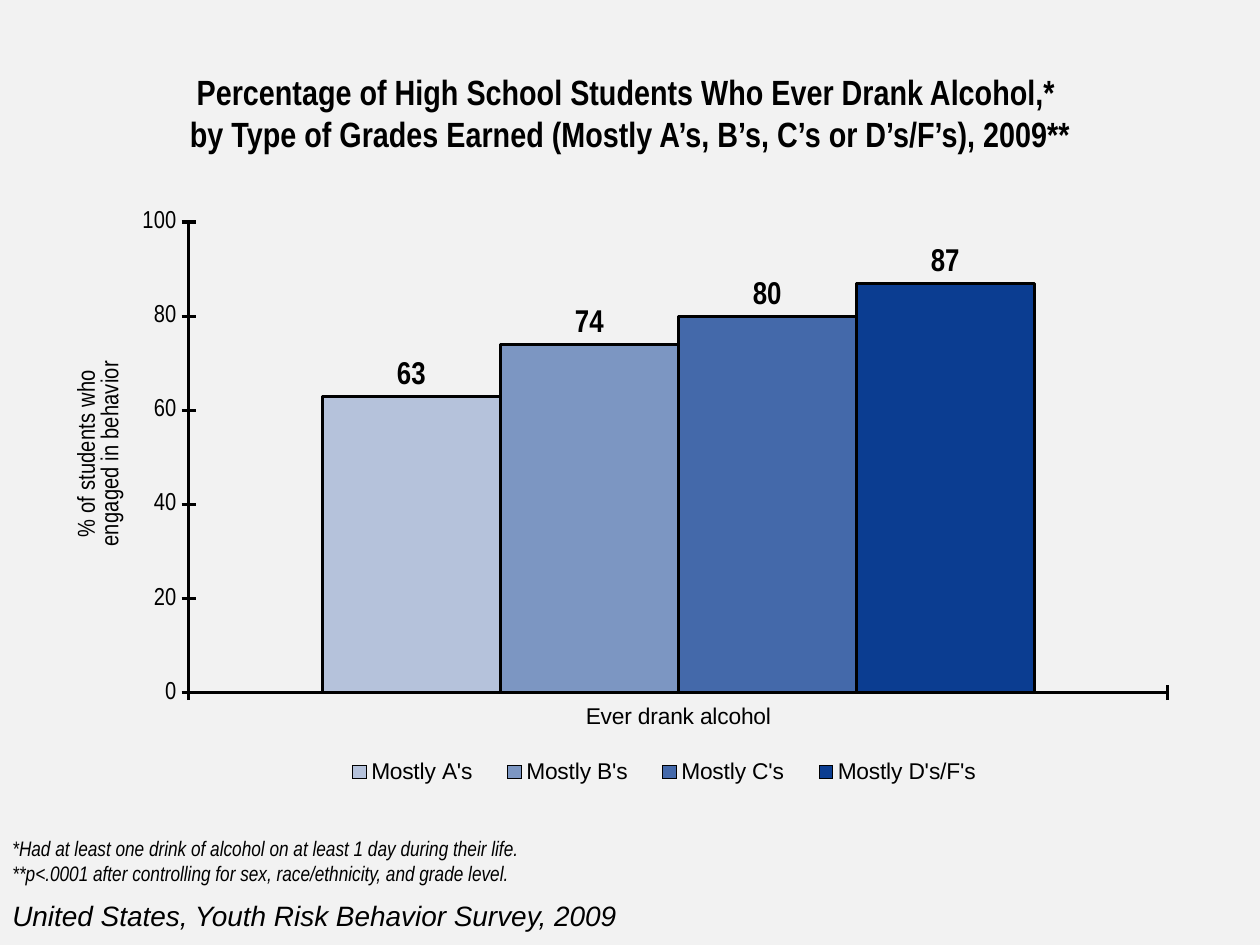
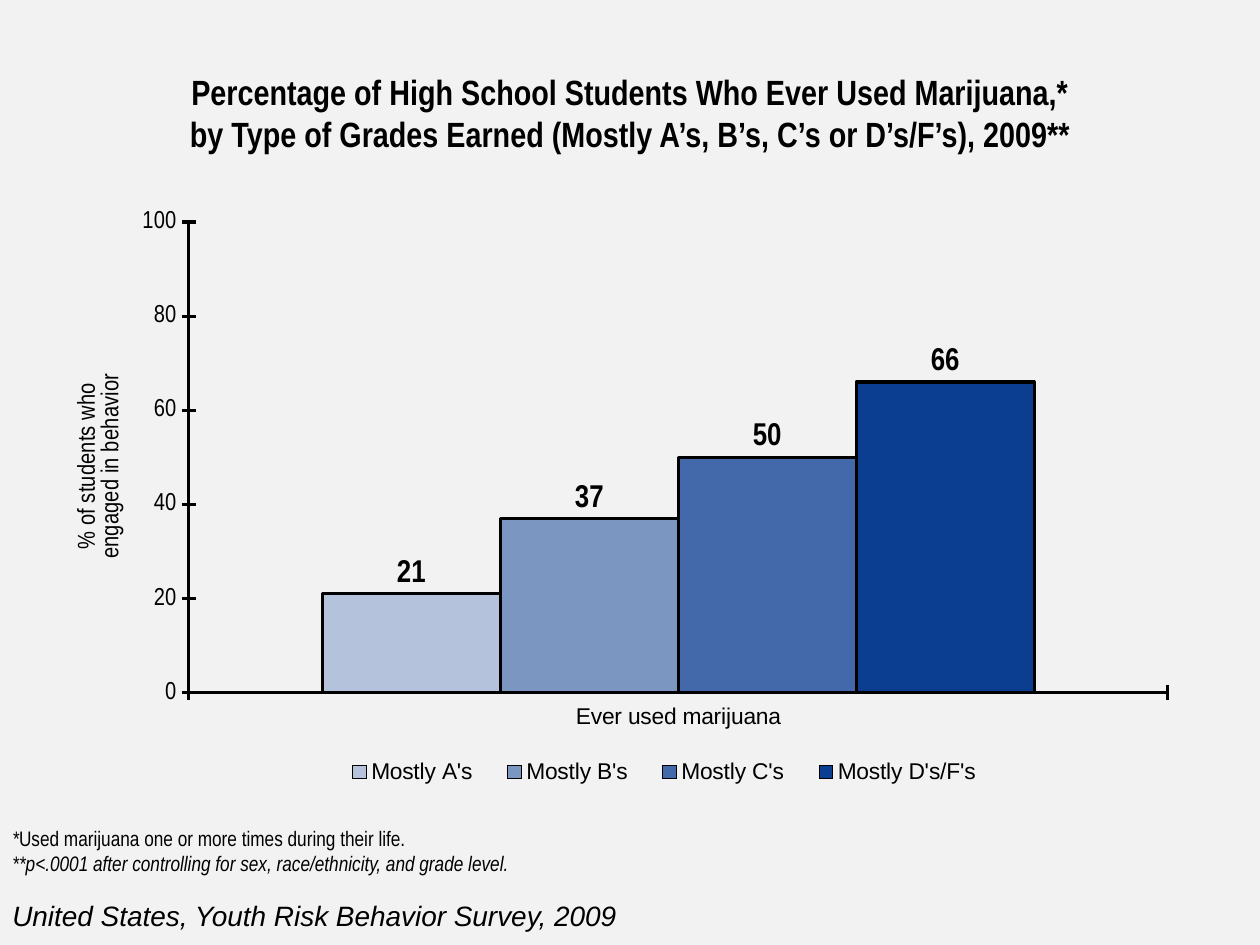
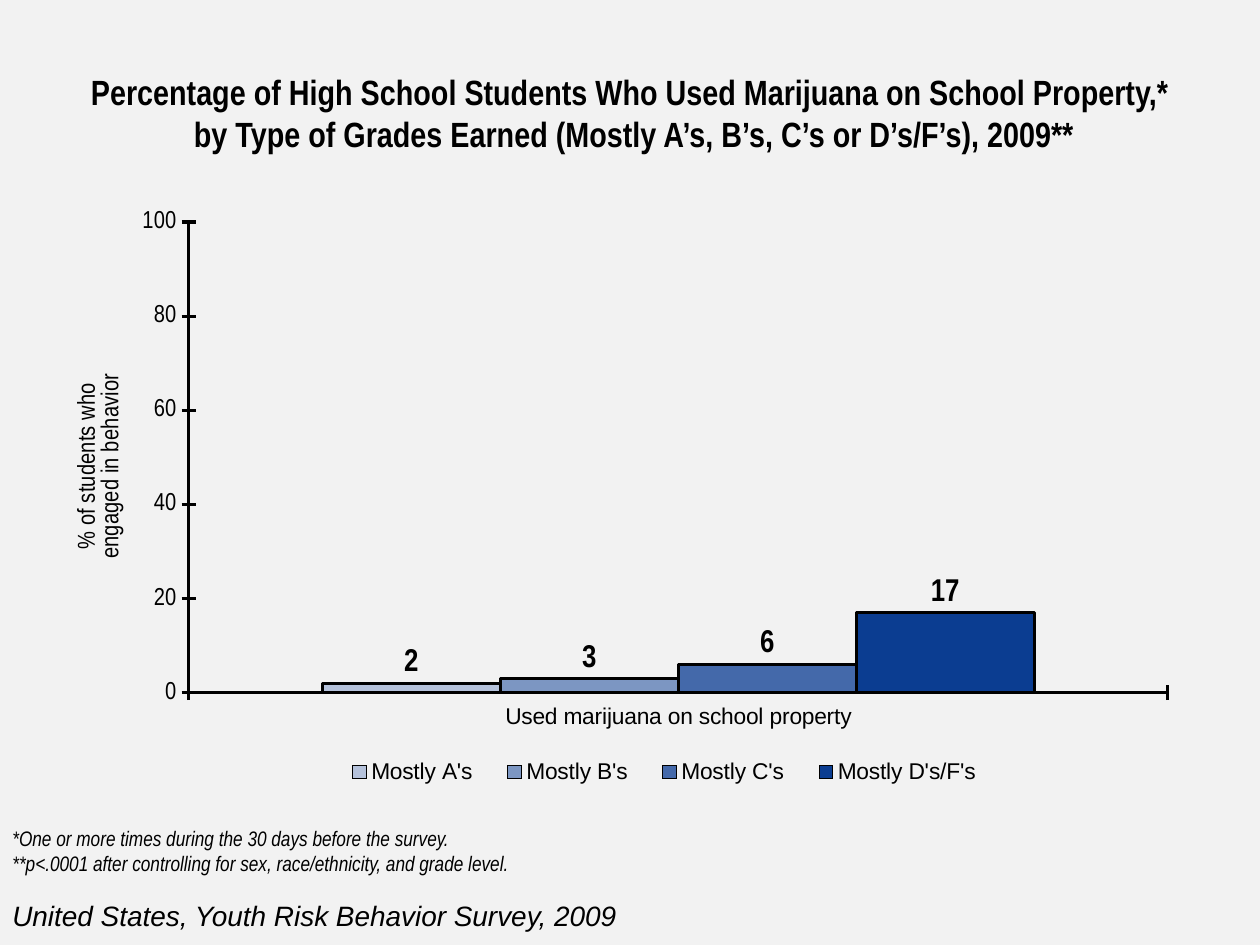
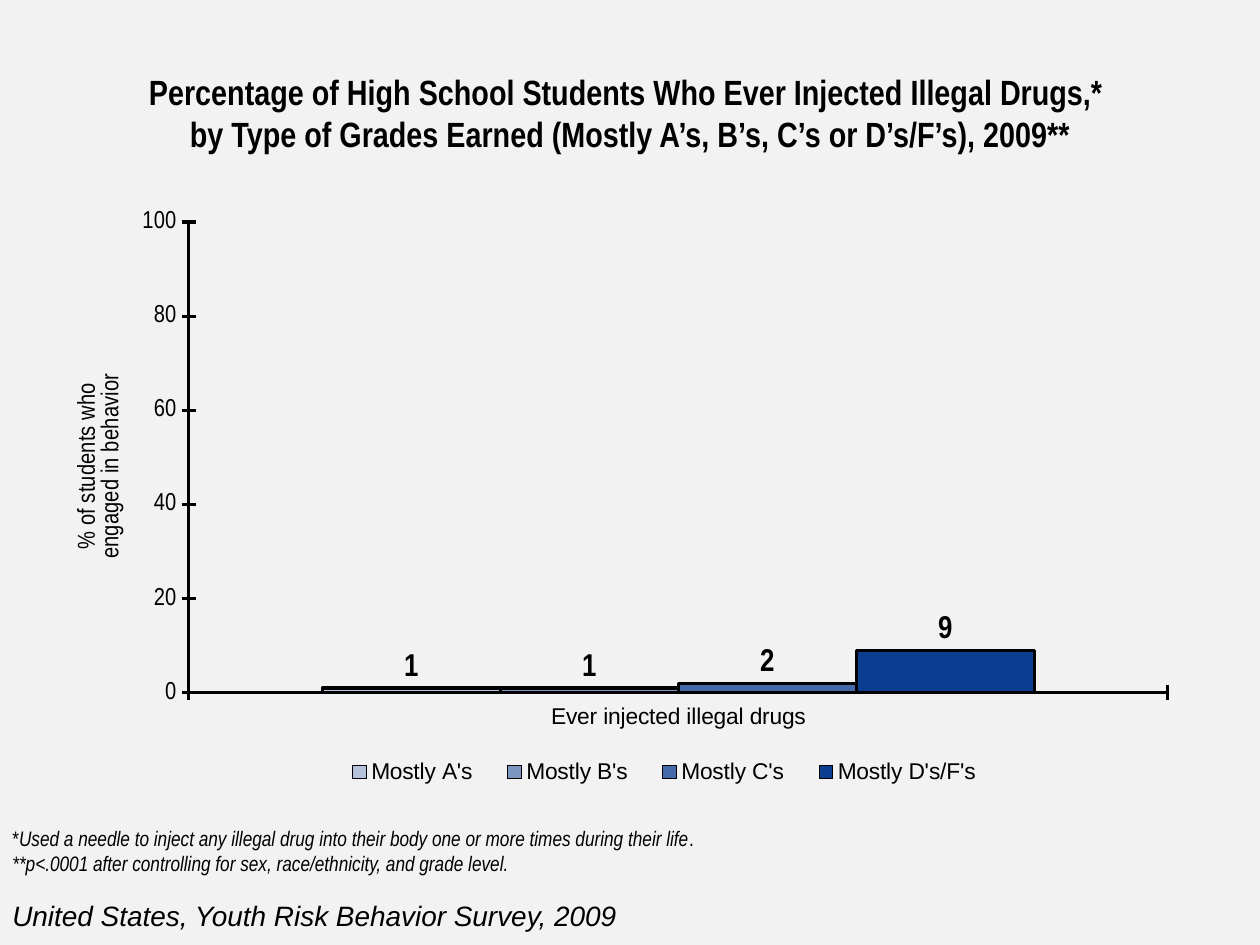
from lxml.etree import SubElement
from pptx import Presentation
from pptx.chart.data import CategoryChartData
from pptx.dml.color import RGBColor
from pptx.enum.chart import XL_CHART_TYPE as ChartType
from pptx.enum.chart import XL_LABEL_POSITION as LabelPosition
from pptx.enum.chart import XL_LEGEND_POSITION as LegendPosition
from pptx.enum.chart import XL_TICK_MARK as TickMark
from pptx.enum.text import MSO_ANCHOR as Anchor
from pptx.enum.text import MSO_AUTO_SIZE as AutoSize
from pptx.enum.text import PP_ALIGN as Align
from pptx.oxml.ns import qn
from pptx.util import Cm, Pt

INK = RGBColor(0x00, 0x00, 0x00)
PAPER = RGBColor(0xF2, 0xF2, 0xF2)
GRADES = [
    ("Mostly A's", RGBColor(0xB5, 0xC2, 0xDB)),
    ("Mostly B's", RGBColor(0x7C, 0x96, 0xC2)),
    ("Mostly C's", RGBColor(0x44, 0x69, 0xAA)),
    ("Mostly D's/F's", RGBColor(0x0B, 0x3D, 0x91)),
]

SUBTITLE = "by Type of Grades Earned (Mostly A’s, B’s, C’s or D’s/F’s), 2009**"
AXIS_TITLE = "% of students who\nengaged in behavior"
CONTROLS = "**p<.0001 after controlling for sex, race/ethnicity, and grade level."
SURVEY = "United States, Youth Risk Behavior Survey, 2009"

SLIDES = [
    {
        "title": "Percentage of High School Students Who Ever Drank Alcohol,* \v" + SUBTITLE,
        "behavior": "Ever drank alcohol",
        "values": [63, 74, 80, 87],
        "note": [("*Had at least one drink of alcohol on at least 1 day during their life.", True)],
        "note_box": (16.71, 16.71),
        "axis_title_top": 0.27,
    },
    {
        "title": "Percentage of High School Students Who Ever Used Marijuana,*\v" + SUBTITLE,
        "behavior": "Ever used marijuana",
        "values": [21, 37, 50, 66],
        "note": [("*", True), ("Used marijuana one or more times during their life.", False)],
        "note_box": (16.51, 11.43),
        "axis_title_top": 0.29,
    },
    {
        "title": "Percentage of High School Students Who Used Marijuana on School Property,*\v "
        + SUBTITLE,
        "behavior": "Used marijuana on school property",
        "values": [2, 3, 6, 17],
        "note": [("*One or more times during the 30 days before the survey.", True)],
        "note_box": (16.51, 14.96),
        "axis_title_top": 0.29,
    },
    {
        "title": "Percentage of High School Students Who Ever Injected Illegal Drugs,* \v" + SUBTITLE,
        "behavior": "Ever injected illegal drugs",
        "values": [1, 1, 2, 9],
        "note": [
            ("*", False),
            ("Used a needle to inject any illegal drug into their body "
             "one or more times during their life", True),
            (".", False),
        ],
        "note_box": (16.51, 15.04),
        "axis_title_top": 0.29,
    },
]

TITLE_FONT = {"name": "Arial Narrow", "size": Pt(20), "bold": True}
NOTE_FONT = {"name": "Arial Narrow", "size": Pt(12)}
SURVEY_FONT = {"name": "Arial", "size": Pt(16)}
CHART_FONT = {"name": "Arial", "size": Pt(18), "bold": False}
CATEGORY_FONT = {"name": "Arial", "size": Pt(13), "bold": False}
VALUE_FONT = {"name": "Arial Narrow", "size": Pt(14), "bold": False}
LABEL_FONT = {"name": "Arial Narrow", "size": Pt(18), "bold": True}


def assign(target, values):
    for name, value in values.items():
        setattr(target, name, value)


def style_font(font, values):
    assign(font, values)
    font.color.rgb = INK


def style_line(line):
    line.color.rgb = INK
    line.width = Pt(1.75)


def set_layout(parent, index, edges, inner=False):
    for old in parent.findall(qn("c:layout")):
        parent.remove(old)
    layout = SubElement(parent, qn("c:layout"))
    parent.insert(index, layout)
    manual = SubElement(layout, qn("c:manualLayout"))
    settings = [("layoutTarget", "inner")] if inner else []
    settings += [("xMode", "edge"), ("yMode", "edge")]
    settings += zip("xywh", edges)
    for name, value in settings:
        SubElement(manual, qn("c:" + name)).set("val", str(value))


def add_title(page, text):
    title = page.shapes.title
    assign(title, {"left": 0, "top": Cm(0.84), "width": Cm(25.4), "height": Cm(2.84)})
    frame = title.text_frame
    frame.text = text
    assign(frame, {
        "auto_size": AutoSize.NONE, "word_wrap": True, "vertical_anchor": Anchor.MIDDLE,
        "margin_left": 0, "margin_right": 0, "margin_top": 0, "margin_bottom": 0,
    })
    para = frame.paragraphs[0]
    para.alignment = Align.CENTER
    for span in para.runs:
        style_font(span.font, TITLE_FONT)


def add_text(page, top, width, height, lines, font):
    box = page.shapes.add_textbox(0, Cm(top), Cm(width), Cm(height))
    frame = box.text_frame
    assign(frame, {"word_wrap": True, "auto_size": AutoSize.SHAPE_TO_FIT_TEXT})
    for number, line in enumerate(lines):
        para = frame.add_paragraph() if number else frame.paragraphs[0]
        for text, italic in line:
            span = para.add_run()
            span.text = text
            style_font(span.font, {**font, "italic": italic})


def style_axis(axis, font):
    assign(axis, {
        "has_major_gridlines": False,
        "major_tick_mark": TickMark.CROSS,
        "minor_tick_mark": TickMark.NONE,
    })
    style_line(axis.format.line)
    style_font(axis.tick_labels.font, font)


def add_axis_title(axis, top):
    title = axis.axis_title
    frame = title.text_frame
    frame.text = AXIS_TITLE
    body = frame._txBody.bodyPr
    body.set("rot", "-5400000")
    body.set("vert", "horz")
    for para in frame.paragraphs:
        para.alignment = Align.CENTER
        for span in para.runs:
            style_font(span.font, VALUE_FONT)
    set_layout(title._element, 1, (0.005, top))


def add_behavior_chart(page, content):
    data = CategoryChartData()
    data.categories = [content["behavior"]]
    for (grade, _), value in zip(GRADES, content["values"]):
        data.add_series(grade, [value])
    chart = page.shapes.add_chart(
        ChartType.COLUMN_CLUSTERED, Cm(1.3), Cm(3.81), Cm(22.81), Cm(12.57), data
    ).chart
    assign(chart, {"has_title": False, "has_legend": True})
    style_font(chart.font, CHART_FONT)

    style_axis(chart.category_axis, CATEGORY_FONT)
    style_axis(chart.value_axis, VALUE_FONT)
    assign(chart.value_axis, {"minimum_scale": 0, "maximum_scale": 100, "major_unit": 20})
    add_axis_title(chart.value_axis, content["axis_title_top"])

    assign(chart.legend, {"position": LegendPosition.BOTTOM, "include_in_layout": False})
    style_font(chart.legend.font, CATEGORY_FONT)
    set_layout(chart.legend._element, 1, (0.23, 0.9, 0.6, 0.07))

    plot = chart.plots[0]
    assign(plot, {"gap_width": 150, "overlap": 0, "vary_by_categories": False})
    for series, (_, color) in zip(plot.series, GRADES):
        series.format.fill.solid()
        series.format.fill.fore_color.rgb = color
        style_line(series.format.line)
        labels = series.data_labels
        assign(labels, {"show_value": True, "position": LabelPosition.OUTSIDE_END})
        style_font(labels.font, LABEL_FONT)
    plot_area = chart._chartSpace.chart.plotArea
    set_layout(plot_area, 0, (0.11, 0.053, 0.865, 0.755), inner=True)


def main():
    deck = Presentation()
    assign(deck, {"slide_width": Cm(25.4), "slide_height": Cm(19.05)})
    background = deck.slide_master.background.fill
    background.solid()
    background.fore_color.rgb = PAPER
    for content in SLIDES:
        page = deck.slides.add_slide(deck.slide_layouts.get_by_name("Title Only"))
        add_title(page, content["title"])
        add_behavior_chart(page, content)
        top, width = content["note_box"]
        add_text(page, top, width, 1.3, [content["note"], [(CONTROLS, True)]], NOTE_FONT)
        add_text(page, 17.98, 13.34, 0.94, [[(SURVEY, True)]], SURVEY_FONT)
    deck.save("out.pptx")


if __name__ == "__main__":
    main()
